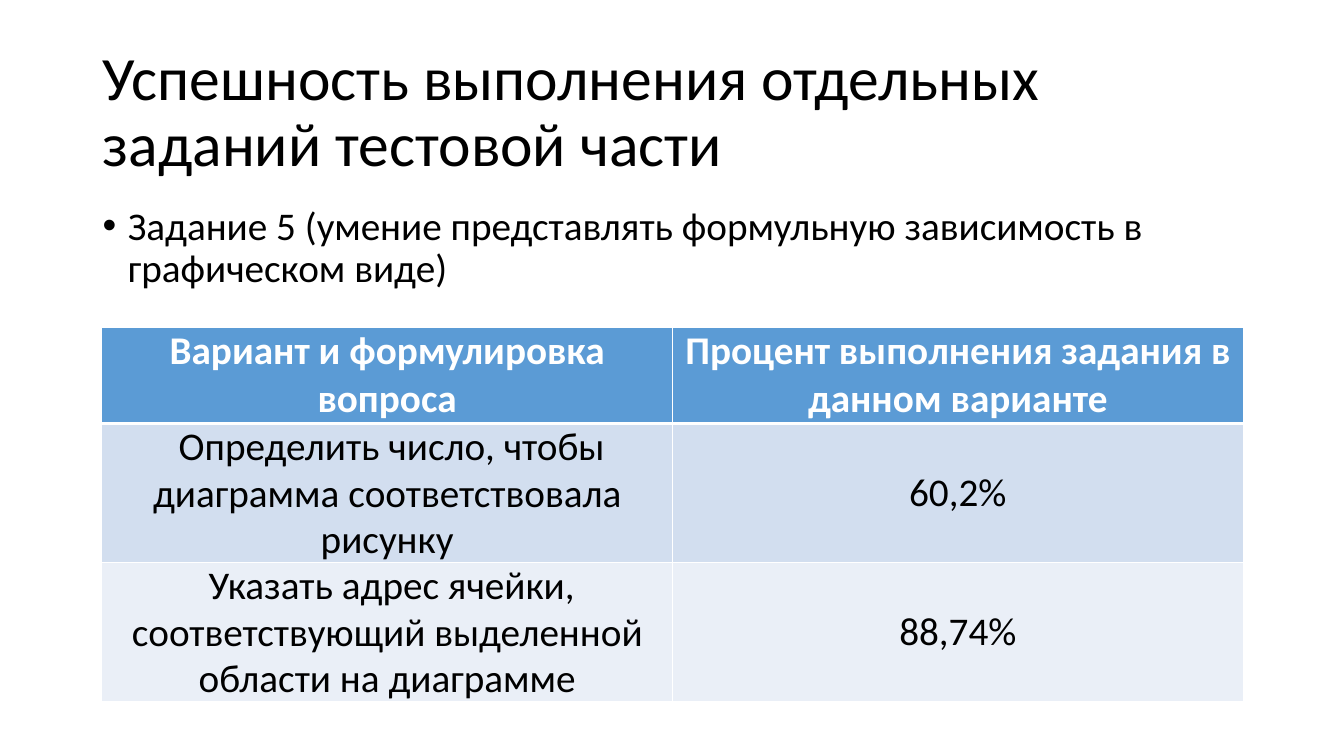
from dataclasses import dataclass

import lxml.etree
import pptx
import pptx.dml.color
import pptx.enum.text
import pptx.oxml
import pptx.oxml.ns
import pptx.util

Inches = pptx.util.Inches
Pt = pptx.util.Pt
ALIGN = pptx.enum.text.PP_ALIGN
ANCHOR = pptx.enum.text.MSO_ANCHOR
qn = pptx.oxml.ns.qn


@dataclass(frozen=True)
class Theme:
    font: str = "Calibri"
    title_size: int = 44
    text_size: int = 28
    ink: str = "000000"
    white: str = "FFFFFF"
    header_fill: str = "5B9BD5"
    row_fills: tuple = ("D2DEEF", "EAEFF7")


theme = Theme()


def write(frame, text, size=theme.text_size, color=theme.ink, bold=False,
          align=ALIGN.LEFT, spacing=1.0, before=0):
    """Fill a text frame with one formatted paragraph and return it."""
    frame.word_wrap = True
    paragraph = frame.paragraphs[0]
    paragraph.alignment = align
    paragraph.line_spacing = spacing
    paragraph.space_before = Pt(before)
    run = paragraph.add_run()
    run.text = text
    run.font.name = theme.font
    run.font.size = Pt(size)
    run.font.bold = bold
    run.font.color.rgb = pptx.dml.color.RGBColor.from_string(color)
    return paragraph


def add_borders(cell, bottom_width):
    """Draw white borders, 1 pt wide except for the bottom one."""
    properties = cell._tc.get_or_add_tcPr()
    for position, side in enumerate(("lnL", "lnR", "lnT", "lnB")):
        width = bottom_width if side == "lnB" else 1
        line = lxml.etree.Element(qn(f"a:{side}"), w=str(Pt(width)))
        fill = lxml.etree.SubElement(line, qn("a:solidFill"))
        lxml.etree.SubElement(fill, qn("a:srgbClr"), val=theme.white)
        properties.insert(position, line)


presentation = pptx.Presentation()
presentation.slide_width = Inches(13.33)
presentation.slide_height = Inches(7.5)
slide = presentation.slides.add_slide(presentation.slide_layouts[6])

title = slide.shapes.add_textbox(Inches(0.92), Inches(0.4), Inches(11.5), Inches(1.45)).text_frame
title.vertical_anchor = ANCHOR.MIDDLE
write(title, "Успешность выполнения отдельных заданий тестовой части",
      size=theme.title_size, spacing=0.9)

task = slide.shapes.add_textbox(Inches(0.92), Inches(2), Inches(11.5), Inches(4.76)).text_frame
task_line = write(task, "Задание 5 (умение представлять формульную зависимость в графическом виде)",
                  spacing=0.9, before=10)
bullet = task_line._p.get_or_add_pPr()
bullet.set("marL", str(Inches(0.25)))
bullet.set("indent", str(Inches(-0.25)))
lxml.etree.SubElement(bullet, qn("a:buFont"), typeface="Arial")
lxml.etree.SubElement(bullet, qn("a:buChar"), char="•")

results = [
    ("Вариант и формулировка вопроса", "Процент выполнения задания в данном варианте"),
    (" Определить число, чтобы диаграмма соответствовала рисунку", "60,2%"),
    (" Указать адрес ячейки, соответствующий выделенной области на диаграмме", "88,74%"),
]
row_heights = (0.95, 1.38, 1.38)
table = slide.shapes.add_table(len(results), 2, Inches(1.01), Inches(3.25),
                               Inches(11.32), Inches(sum(row_heights))).table

for row, (texts, height) in enumerate(zip(results, row_heights)):
    table.rows[row].height = Inches(height)
    header = row == 0
    fill = theme.header_fill if header else theme.row_fills[row - 1]
    for column, text in enumerate(texts):
        cell = table.cell(row, column)
        cell.margin_left = cell.margin_right = Inches(0.05)
        cell.margin_top = cell.margin_bottom = 0
        cell.vertical_anchor = ANCHOR.MIDDLE
        cell.fill.solid()
        cell.fill.fore_color.rgb = pptx.dml.color.RGBColor.from_string(fill)
        add_borders(cell, bottom_width=3 if header else 1)
        write(cell.text_frame, text, color=theme.white if header else theme.ink,
              bold=header, align=ALIGN.CENTER, spacing=1.0 if header else 0.97)

presentation.save("out.pptx")
